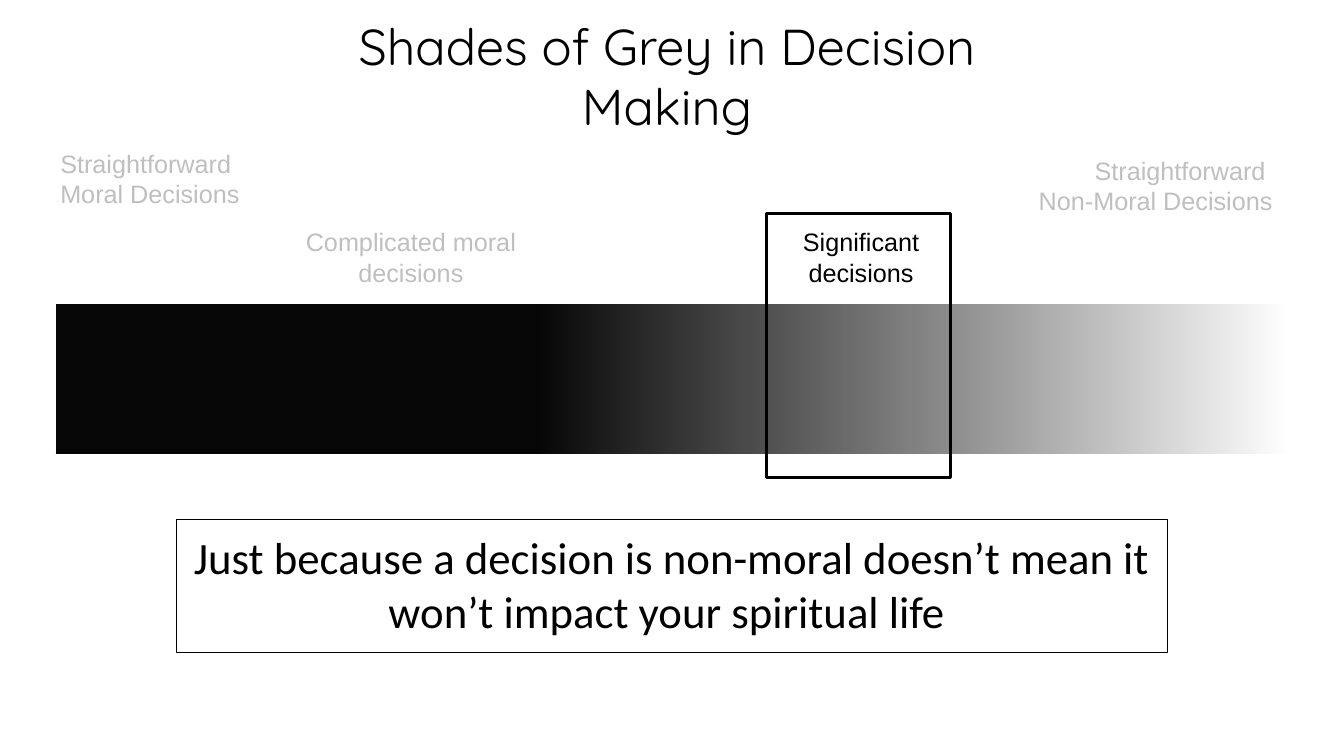
import pptx
import pptx.util
import pptx.dml.color
import pptx.enum.shapes
import pptx.enum.text
import pptx.oxml.ns
import lxml.etree
from dataclasses import dataclass

Inches = pptx.util.Inches
Align = pptx.enum.text.PP_ALIGN


def rgb(value):
    return pptx.dml.color.RGBColor.from_string(value)


@dataclass(frozen=True)
class Theme:
    black: str = "000000"
    white: str = "FFFFFF"
    muted: str = "BFBFBF"
    title_font: str = "Quicksand"
    label_font: str = "Arial"
    message_font: str = "Calibri"
    title_size: int = 36
    label_size: int = 18
    message_size: int = 32


class SlideBuilder:
    def __init__(self, slide, theme):
        self.slide = slide
        self.theme = theme

    def text(self, place, lines, font, size, color, align=Align.CENTER):
        box = self.slide.shapes.add_textbox(*map(Inches, place))
        frame = box.text_frame
        frame.word_wrap = True
        frame.auto_size = pptx.enum.text.MSO_AUTO_SIZE.SHAPE_TO_FIT_TEXT
        frame.text = lines
        for para in frame.paragraphs:
            para.alignment = align
            for span in para.runs:
                span.font.name = font
                span.font.size = pptx.util.Pt(size)
                span.font.color.rgb = rgb(color)

    def label(self, place, lines, color, align=Align.CENTER):
        theme = self.theme
        self.text(place, lines, theme.label_font, theme.label_size, color, align)

    def rectangle(self, place, line_color, line_width):
        box = self.slide.shapes.add_shape(
            pptx.enum.shapes.MSO_SHAPE.RECTANGLE, *map(Inches, place))
        box.shadow.inherit = False
        box.fill.background()
        box.line.color.rgb = rgb(line_color)
        box.line.width = pptx.util.Pt(line_width)
        return box

    def gradient_bar(self, place, dark_until, dark_opacity):
        bar = self.rectangle(place, self.theme.white, 0.75)
        bar.fill.gradient()
        bar.fill.gradient_angle = 0
        dark, light = bar.fill.gradient_stops
        dark.position, dark.color.rgb = dark_until, rgb(self.theme.black)
        light.position, light.color.rgb = 1, rgb(self.theme.white)
        # Slight transparency at the dark end
        qn = pptx.oxml.ns.qn
        dark_color = next(bar.element.iter(qn("a:gs"))).find(qn("a:srgbClr"))
        alpha = lxml.etree.SubElement(dark_color, qn("a:alpha"))
        alpha.set("val", str(round(dark_opacity * 100000)))


def main():
    deck = pptx.Presentation()
    deck.slide_width, deck.slide_height = Inches(13.33), Inches(7.5)
    theme = Theme()
    page = SlideBuilder(deck.slides.add_slide(deck.slide_layouts[6]), theme)

    # Title
    page.text((2.91, 0.1, 7.41, 1.31), "Shades of Grey in Decision Making",
              theme.title_font, theme.title_size, theme.black)

    # Scale from black to white
    page.gradient_bar((0.55, 3.01, 12.22, 1.5), 0.39, 0.97)

    # Labels along the scale
    page.label((0.5, 1.42, 2.83, 0.71), "Straightforward\nMoral Decisions",
               theme.muted, Align.LEFT)
    page.label((2.74, 2.2, 2.67, 0.71), "Complicated moral decisions", theme.muted)
    page.label((7.35, 2.2, 2.38, 0.71), "Significant decisions", theme.black)
    page.label((9.22, 1.49, 3.5, 0.71), "Straightforward \nNon-Moral Decisions",
               theme.muted, Align.RIGHT)

    # Framed message
    page.text((1.75, 5.21, 9.83, 1.18),
              "Just because a decision is non-moral doesn’t mean it "
              "won’t impact your spiritual life ",
              theme.message_font, theme.message_size, theme.black)
    page.rectangle((1.75, 5.15, 9.83, 1.32), theme.black, 0.5)

    # Highlight around the significant decisions
    page.rectangle((7.6, 2.12, 1.83, 2.62), theme.black, 2)

    deck.save("out.pptx")


if __name__ == "__main__":
    main()
